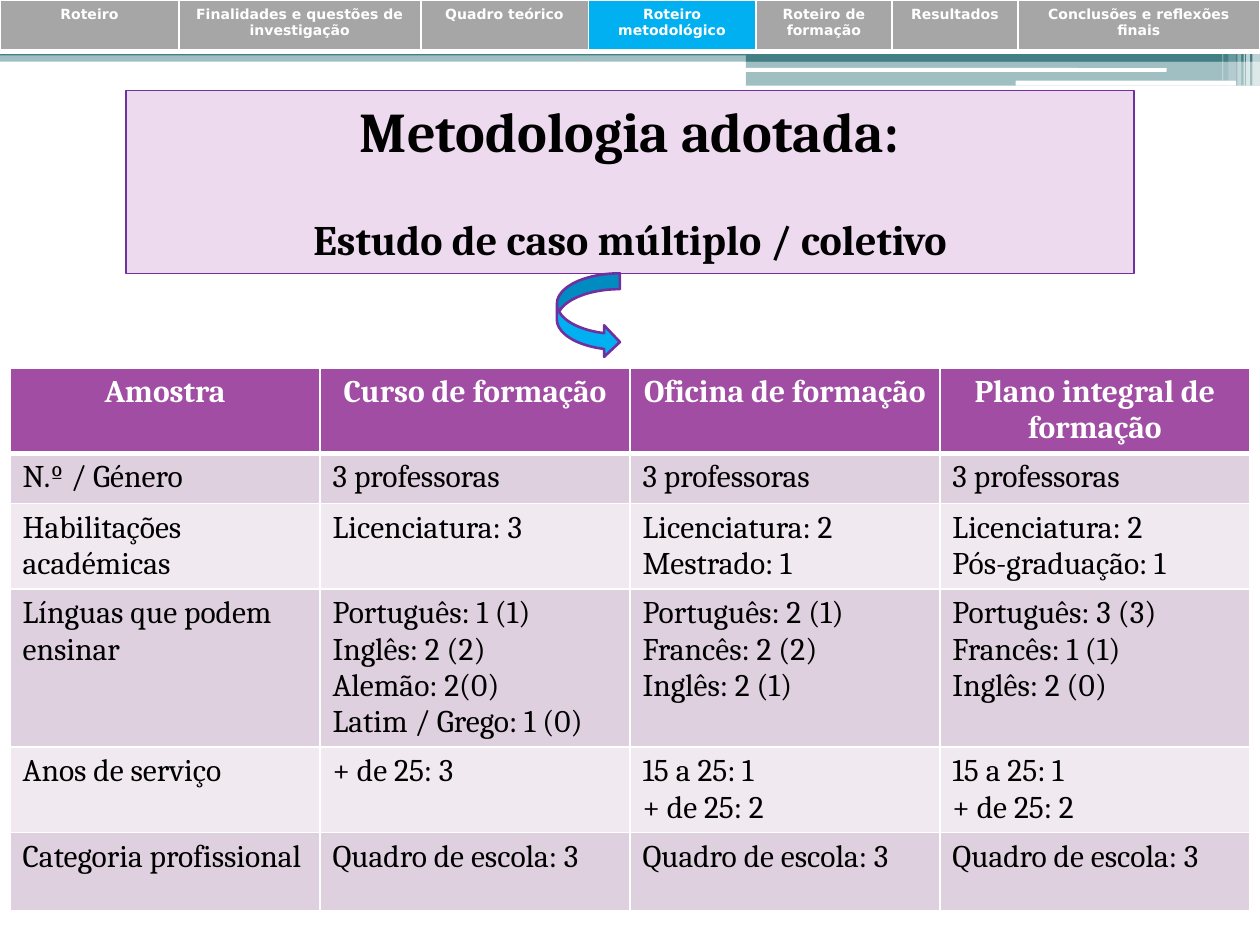
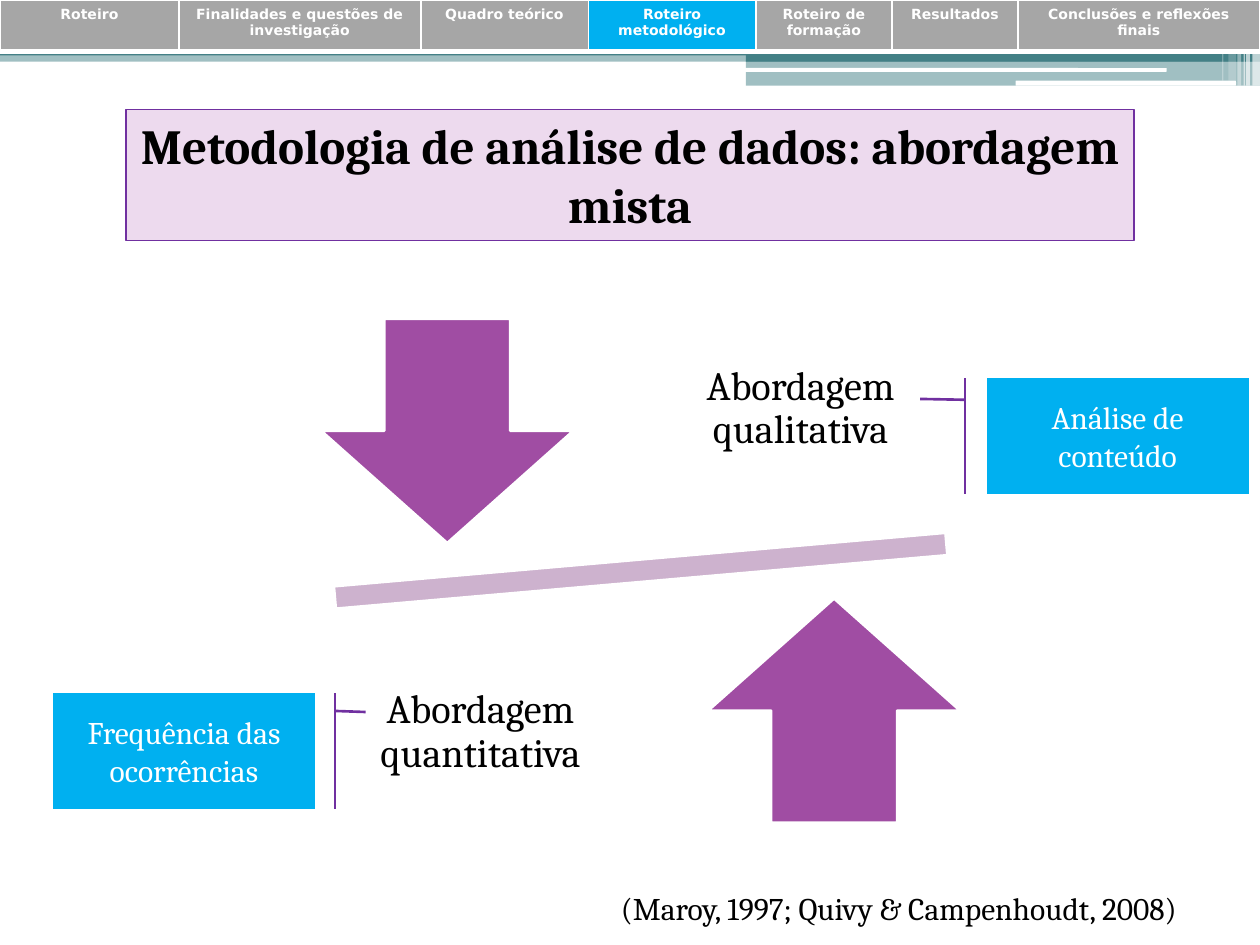
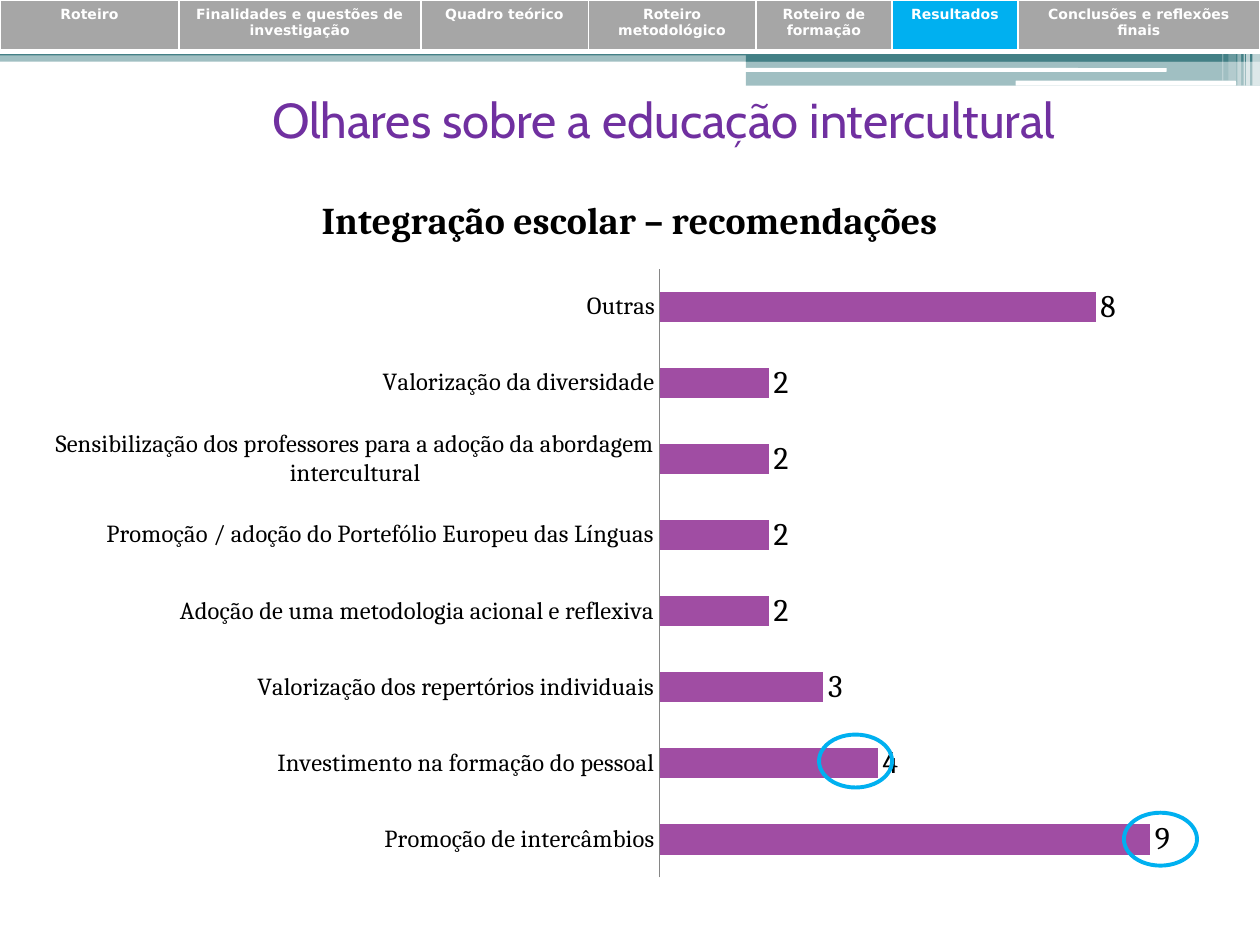
from lxml import etree
from pptx import Presentation
from pptx.chart.data import CategoryChartData
from pptx.dml.color import RGBColor
from pptx.enum.chart import XL_CHART_TYPE, XL_LABEL_POSITION, XL_TICK_MARK
from pptx.enum.shapes import MSO_SHAPE
from pptx.enum.text import MSO_ANCHOR, PP_ALIGN
from pptx.oxml import parse_xml
from pptx.oxml.ns import nsdecls, qn
from pptx.util import Inches, Pt

RECT, ROUND, OVAL = MSO_SHAPE.RECTANGLE, MSO_SHAPE.ROUNDED_RECTANGLE, MSO_SHAPE.OVAL
CURVED, MINUS = MSO_SHAPE.CURVED_RIGHT_ARROW, MSO_SHAPE.MATH_MINUS
DOWN, UP = MSO_SHAPE.DOWN_ARROW, MSO_SHAPE.UP_ARROW
CALLOUT = MSO_SHAPE.LINE_CALLOUT_1_ACCENT_BAR
LEFT, CENTER = PP_ALIGN.LEFT, PP_ALIGN.CENTER
TOP, MIDDLE, BOTTOM = MSO_ANCHOR.TOP, MSO_ANCHOR.MIDDLE, MSO_ANCHOR.BOTTOM

WHITE, BLACK, GREY = "FFFFFF", "000000", "A6A6A6"
TEAL, SLATE, BLUE = "438086", "424456", "00B0F0"
PURPLE, VIOLET, PINK, MAUVE = "A04DA3", "7030A0", "EDDAEE", "CDB2CE"
SERIF = "Cambria"
rgb = RGBColor.from_string


def write(frame, text, size=18, color=BLACK, font=SERIF, bold=False,
          align=CENTER, anchor=TOP, space=None, before=0):
    """Fill a text frame, one paragraph per line of text."""
    frame.word_wrap = True
    frame.vertical_anchor = anchor
    frame.text = text
    for para in frame.paragraphs:
        para.alignment = align
        para.line_spacing = space
        para.space_before = Pt(before)
        for run in para.runs:
            run.font.size, run.font.name, run.font.bold = Pt(size), font, bold
            run.font.color.rgb = rgb(color)


def draw(slide, kind, at, fill=None, line=None, width=1.5, alpha=None, adj=()):
    """Add a preset shape with a plain fill and line."""
    shape = slide.shapes.add_shape(kind, *map(Inches, at))
    shape.shadow.inherit = False
    for i, value in enumerate(adj):
        shape.adjustments[i] = value
    if fill:
        shape.fill.solid()
        shape.fill.fore_color.rgb = rgb(fill)
    else:
        shape.fill.background()
    if alpha:
        tone = shape.fill._xPr.find(".//" + qn("a:srgbClr"))
        etree.SubElement(tone, qn("a:alpha")).set("val", str(alpha * 1000))
    if line:
        shape.line.color.rgb = rgb(line)
        shape.line.width = Pt(width)
    else:
        shape.line.fill.background()
    return shape


deck = Presentation()
deck.slide_width, deck.slide_height = Inches(10), Inches(7.5)
slides = [deck.slides.add_slide(deck.slide_layouts[6]) for _ in range(3)]
case, mixed, views = slides

# Shared bands: kind, place, fill, opacity
BANDS = [
    (RECT, (0, 0.4, 10, 0.09), TEAL, 50),
    (RECT, (0, 0, 10, 0.34), SLATE, None),
    (RECT, (0, 0.34, 10, 0.1), TEAL, None),
    (RECT, (5.92, 0.39, 4.08, 0.1), TEAL, None),
    (RECT, (5.92, 0.48, 4.08, 0.2), TEAL, 50),
    (ROUND, (5.91, 0.54, 3.35, 0.03), WHITE, None),
    (ROUND, (8.06, 0.64, 1.75, 0.04), WHITE, None),
    (RECT, (9.94, 0, 0.06, 0.68), WHITE, 65),
    (RECT, (9.89, 0, 0.03, 0.68), WHITE, 65),
    (RECT, (9.87, 0, 0.01, 0.68), WHITE, 60),
    (RECT, (9.82, 0, 0.03, 0.68), WHITE, 40),
    (RECT, (9.75, 0, 0.06, 0.64), WHITE, 20),
    (RECT, (9.7, 0, 0.01, 0.64), WHITE, 30),
]
for slide in slides:
    for kind, at, fill, alpha in BANDS:
        draw(slide, kind, at, fill, alpha=alpha)

# Slide 1: adopted method
head = draw(case, RECT, (1, 0.72, 8, 1.45), PINK, VIOLET, 0.75)
write(head.text_frame, "Metodologia adotada:\nEstudo de caso múltiplo / coletivo",
      size=24, bold=True)
first, second = head.text_frame.paragraphs
first.runs[0].font.size = Pt(32)
second.space_before = Pt(28)
draw(case, CURVED, (4.42, 2.17, 0.5, 0.67), BLUE, VIOLET)

SAMPLE = [
    ["Amostra", "Curso de formação", "Oficina de formação",
     "Plano integral de formação"],
    ["N.º / Género"] + ["3 professoras"] * 3,
    ["Habilitações académicas", "Licenciatura: 3", "Licenciatura: 2\nMestrado: 1",
     "Licenciatura: 2\nPós-graduação: 1"],
    ["Línguas que podem ensinar",
     "Português: 1 (1)\nInglês: 2 (2)\nAlemão: 2(0)\nLatim / Grego: 1 (0)",
     "Português: 2 (1)\nFrancês: 2 (2)\nInglês: 2 (1)",
     "Português: 3 (3)\nFrancês: 1 (1)\nInglês: 2 (0)"],
    ["Anos de serviço", "+ de 25: 3"] + ["15 a 25: 1\n+ de 25: 2"] * 2,
    ["Categoria profissional"] + ["Quadro de escola: 3"] * 3,
]

# Slide 2: balance of the two approaches
head = draw(mixed, RECT, (1, 0.87, 8, 1.04), PINK, VIOLET, 0.75)
write(head.text_frame, "Metodologia de análise de dados: abordagem mista",
      size=28, bold=True)
draw(mixed, MINUS, (1.77, 4.15, 6.63, 0.76), MAUVE, WHITE).rotation = 355
draw(mixed, DOWN, (2.55, 2.53, 2, 1.78), PURPLE, WHITE)
draw(mixed, UP, (5.62, 4.75, 2, 1.78), PURPLE, WHITE)

NOTES = [
    ("Abordagem qualitativa", (5.18, 2.31, 2.35, 1.87), 0.18,
     dict(size=23, anchor=MIDDLE, space=0.9)),
    ("Abordagem quantitativa", (2.75, 4.88, 2.13, 1.87), 0.18,
     dict(size=23, anchor=MIDDLE, space=0.9)),
    ("(Maroy, 1997; Quivy & Campenhoudt, 2008)", (4.83, 7.01, 5.25, 0.4), 0.1,
     dict(align=LEFT)),
]
for text, at, inset, form in NOTES:
    frame = mixed.shapes.add_textbox(*map(Inches, at)).text_frame
    frame.margin_left = frame.margin_right = Inches(inset)
    write(frame, text, **form)

CALLS = [
    ("Análise de conteúdo", (7.83, 3), (0.188, -0.083, 0.181, -0.254)),
    ("Frequência das ocorrências", (0.42, 5.5), (0.155, 1.077, 0.164, 1.193)),
]
for text, spot, adj in CALLS:
    call = draw(mixed, CALLOUT, (*spot, 2.08, 0.92), BLUE, VIOLET, adj=adj)
    write(call.text_frame, text, color=WHITE, anchor=MIDDLE)

# Slide 3: bar chart of recommendations
ADVICE = {
    "Promoção de intercâmbios": 9,
    "Investimento na formação do pessoal": 4,
    "Valorização dos repertórios individuais": 3,
    "Adoção de uma metodologia acional e reflexiva": 2,
    "Promoção / adoção do Portefólio Europeu das Línguas": 2,
    "Sensibilização dos professores para a adoção da abordagem intercultural": 2,
    "Valorização da diversidade": 2,
    "Outras": 8,
}
data = CategoryChartData()
data.categories = list(ADVICE)
data.add_series("Series 1", list(ADVICE.values()))
place = map(Inches, (0.25, 1.33, 9.5, 5.75))
chart = views.shapes.add_chart(XL_CHART_TYPE.BAR_CLUSTERED, *place, data).chart
chart.font.size, chart.font.name = Pt(18), SERIF
chart.font.color.rgb = rgb(BLACK)
chart.has_legend = False
write(chart.chart_title.text_frame, "Integração escolar – recomendações",
      size=21.6, bold=True)

plot = chart.plots[0]
plot.gap_width, plot.overlap, plot.vary_by_categories = 150, -25, False
bars = plot.series[0].format.fill
bars.solid()
bars.fore_color.rgb = rgb(PURPLE)
plot.has_data_labels = True
plot.data_labels.show_value = True
plot.data_labels.position = XL_LABEL_POSITION.OUTSIDE_END

names, scale = chart.category_axis, chart.value_axis
names.major_tick_mark = XL_TICK_MARK.NONE
names.tick_labels.font.size = Pt(14)
names.format.line.color.rgb = rgb("868686")
scale.visible = scale.has_major_gridlines = False
scale.minimum_scale, scale.maximum_scale = 0, 10

# Fixed plot area
area = chart._chartSpace.find(".//" + qn("c:plotArea"))
for old in area.findall(qn("c:layout")):
    area.remove(old)
spots = "".join(f'<c:{tag} val="{val}"/>' for tag, val in [
    ("layoutTarget", "inner"), ("xMode", "edge"), ("yMode", "edge"),
    ("x", 0.525), ("y", 0.14), ("w", 0.455), ("h", 0.84)])
area.insert(0, parse_xml(f'<c:layout {nsdecls("c")}><c:manualLayout>{spots}'
                         '</c:manualLayout></c:layout>'))

# Title and rings
frame = views.shapes.add_textbox(*map(Inches, (0, 0.55, 10, 1.2))).text_frame
frame.margin_left, frame.margin_bottom = Inches(0.63), Inches(0.57)
write(frame, "Olhares sobre a educação intercultural", size=28, color=VIOLET,
      font="Cabin", anchor=BOTTOM)
for x, y in [(8.92, 6.45), (6.5, 5.83)]:
    draw(views, OVAL, (x, y, 0.58, 0.42), line=BLUE, width=2.25)

# Tables: sample on slide 1, section tabs on every slide
TABS = ["Roteiro", "Finalidades e questões de investigação", "Quadro teórico",
        "Roteiro metodológico", "Roteiro de formação", "Resultados",
        "Conclusões e reflexões finais"]
WIDE = [1.42, 1.92, 1.33, 1.33, 1.08, 1, 1.92]
TALL = [0.67, 0.4, 0.67, 1.25, 0.67, 0.62]
grids = [(case, 0.08, 2.92, [2.46] * 4, TALL, SAMPLE, None)]
for slide, here in zip(slides, [3, 3, 5]):
    grids.append((slide, 0, 0, WIDE, [0.41], [TABS], here))

for slide, x, y, cols, rows, cells, here in grids:
    table = slide.shapes.add_table(
        len(rows), len(cols), Inches(x), Inches(y),
        Inches(sum(cols)), Inches(sum(rows))).table
    table.first_row = table.horz_banding = False
    for col, size in zip(table.columns, cols):
        col.width = Inches(size)
    for row, size in zip(table.rows, rows):
        row.height = Inches(size)
    for r, line in enumerate(cells):
        for c, text in enumerate(line):
            cell = table.cell(r, c)
            if here is not None:
                fill = BLUE if c == here else GREY
                form = dict(size=8, font="DejaVu Sans", color=WHITE, bold=True)
            elif r == 0:
                fill, form = PURPLE, dict(color=WHITE, bold=True)
            else:
                fill, form = ("DFD0E0" if r % 2 else "F0E9F0"), dict(align=LEFT)
            write(cell.text_frame, text, **form)
            edges = dict(lnL=1, lnR=1, lnT=3 if r == 1 else 1, lnB=1 if r else 3)
            for tag, width in edges.items():
                cell._tc.get_or_add_tcPr().append(parse_xml(
                    f'<a:{tag} {nsdecls("a")} w="{width * 12700}"><a:solidFill>'
                    f'<a:srgbClr val="{WHITE}"/></a:solidFill></a:{tag}>'))
            cell.fill.solid()
            cell.fill.fore_color.rgb = rgb(fill)

deck.save("out.pptx")
